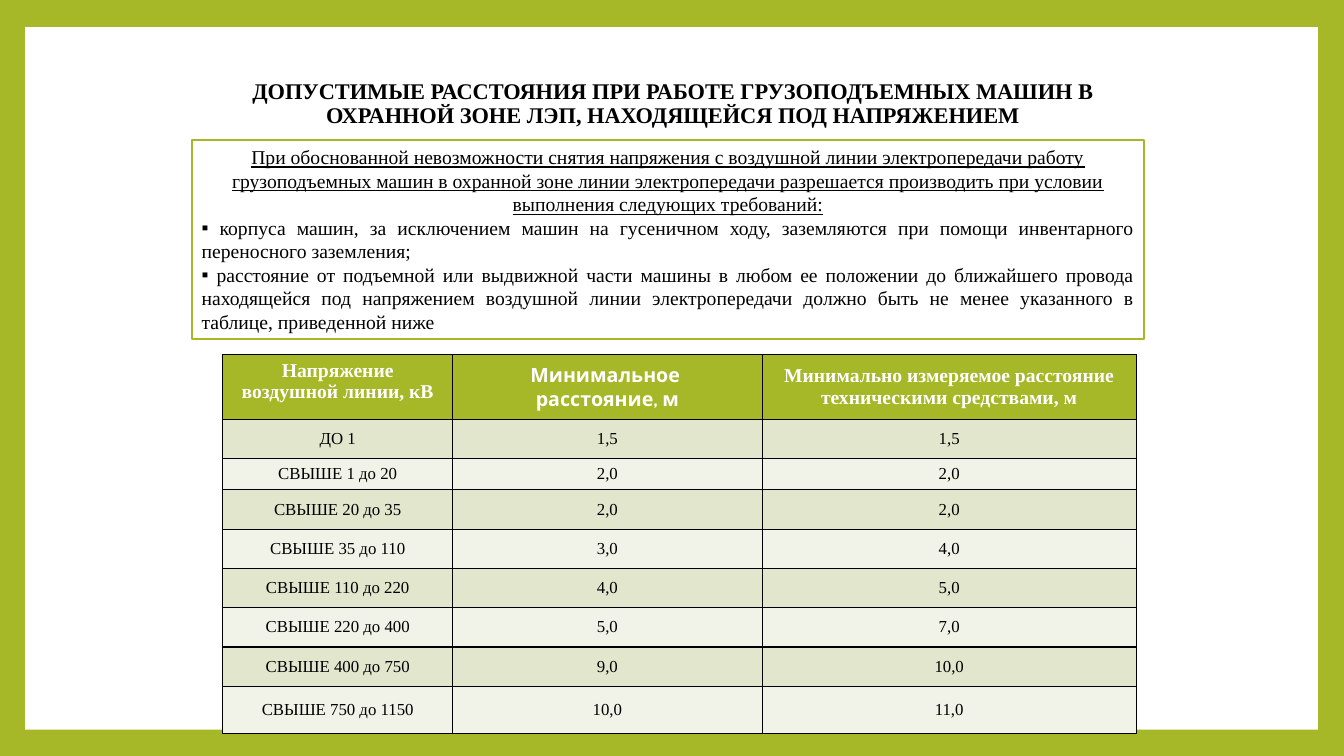
from lxml import etree
from pptx import Presentation
from pptx.dml.color import RGBColor
from pptx.enum import shapes, text
from pptx.oxml import ns
from pptx.util import Inches, Pt

HUES = {"green": "A6B727", "white": "FFFFFF", "black": "000000",
        "dark": "E1E6CD", "light": "F1F3E8"}
SERIF = "Times New Roman"
TITLE = ("ДОПУСТИМЫЕ РАССТОЯНИЯ ПРИ РАБОТЕ ГРУЗОПОДЪЕМНЫХ МАШИН В "
         "ОХРАННОЙ ЗОНЕ ЛЭП, НАХОДЯЩЕЙСЯ ПОД НАПРЯЖЕНИЕМ")
LEAD = ("При обоснованной невозможности снятия напряжения с воздушной линии "
        "электропередачи работу грузоподъемных машин в охранной зоне линии "
        "электропередачи разрешается производить при условии выполнения "
        "следующих требований:")
RULES = [
    " корпуса машин, за исключением машин на гусеничном ходу, заземляются "
    "при помощи инвентарного переносного заземления;",
    " расстояние от подъемной или выдвижной части машины в любом ее положении "
    "до ближайшего провода находящейся под напряжением воздушной линии "
    "электропередачи должно быть не менее указанного в таблице, приведенной ниже",
]
HEADS = ["Напряжение воздушной линии, кВ",
         "Минимальное \nрасстояние, м",
         "Минимально измеряемое расстояние техническими средствами, м"]
ROWS = [
    ("ДО 1", "1,5", "1,5"),
    ("СВЫШЕ 1 до 20", "2,0", "2,0"),
    ("СВЫШЕ 20 до 35", "2,0", "2,0"),
    ("СВЫШЕ 35 до 110", "3,0", "4,0"),
    ("СВЫШЕ 110 до 220", "4,0", "5,0"),
    ("СВЫШЕ 220 до 400", "5,0", "7,0"),
    ("СВЫШЕ 400 до 750", "9,0", "10,0"),
    ("СВЫШЕ 750 до 1150", "10,0", "11,0"),
]
WIDTHS = [2.28, 3.07, 3.71]
HEIGHTS = [0.64, 0.39, 0.31] + [0.39] * 5 + [0.47]


def hue(name):
    return RGBColor.from_string(HUES[name])


def paint(fill, name):
    fill.solid()
    fill.fore_color.rgb = hue(name)


def place(shape, box):
    for key, size in zip(("left", "top", "width", "height"), box):
        setattr(shape, key, Inches(size))


def style(para, size, color="black", align=text.PP_ALIGN.CENTER, **form):
    para.alignment = align
    para.space_before = Pt(0)
    for key, value in {"name": SERIF, "size": Pt(size), **form}.items():
        setattr(para.font, key, value)
    para.font.color.rgb = hue(color)


def mark(para, char=None):
    """Set the paragraph flush left, with an inline bullet or none."""
    props = para._p.get_or_add_pPr()
    props.set("marL", "0")
    props.set("indent", "0")
    tag = etree.SubElement(props, ns.qn("a:buChar" if char else "a:buNone"))
    if char:
        tag.set("char", char)


def border(cell):
    props = cell._tc.get_or_add_tcPr()
    for i, side in enumerate(("lnL", "lnR", "lnT", "lnB")):
        line = etree.Element(ns.qn("a:" + side), w=str(Pt(1)))
        fill = etree.SubElement(line, ns.qn("a:solidFill"))
        etree.SubElement(fill, ns.qn("a:srgbClr"), val=HUES["black"])
        props.insert(i, line)


def frame(slide, box):
    paint(slide.background.fill, "green")
    panel = slide.shapes.add_shape(shapes.MSO_SHAPE.RECTANGLE,
                                   *map(Inches, box))
    panel.shadow.inherit = False
    paint(panel.fill, "white")
    panel.line.fill.background()
    tree = slide.shapes._spTree
    tree.remove(panel._element)
    tree.insert(2, panel._element)


def head(slide, box):
    title = slide.shapes.title
    place(title, box)
    area = title.text_frame
    area.text = TITLE
    area.auto_size = text.MSO_AUTO_SIZE.NONE
    area.vertical_anchor = text.MSO_ANCHOR.MIDDLE
    para = area.paragraphs[0]
    para.line_spacing = 0.9
    style(para, 16, bold=True)


def terms(slide, box):
    body = slide.placeholders[1]
    place(body, box)
    paint(body.fill, "white")
    body.line.color.rgb = hue("green")
    body.line.width = Pt(1.5)
    area = body.text_frame
    area.text = "\n".join([LEAD] + RULES)
    area.auto_size = text.MSO_AUTO_SIZE.NONE
    area.vertical_anchor = text.MSO_ANCHOR.TOP
    lead, *rules = area.paragraphs
    mark(lead)
    style(lead, 14, underline=True)
    for para in rules:
        mark(para, "▪")
        style(para, 14, align=text.PP_ALIGN.JUSTIFY)


def grid(slide, box):
    table = slide.shapes.add_table(len(HEIGHTS), len(WIDTHS),
                                   *map(Inches, box)).table
    for col, width in zip(table.columns, WIDTHS):
        col.width = Inches(width)
    for row, height in zip(table.rows, HEIGHTS):
        row.height = Inches(height)
    for r, words in enumerate([HEADS] + ROWS):
        for c, word in enumerate(words):
            cell = table.cell(r, c)
            cell.text = word
            cell.vertical_anchor = text.MSO_ANCHOR.MIDDLE
            paint(cell.fill, ("dark" if r % 2 else "light") if r else "green")
            border(cell)
            for para in cell.text_frame.paragraphs:
                if r:
                    style(para, 12, bold=False)
                else:
                    style(para, 14, "white", bold=True,
                          name="Cabin" if c == 1 else SERIF)
    table.cell(0, 0).vertical_anchor = text.MSO_ANCHOR.TOP


def main():
    deck = Presentation()
    deck.slide_width, deck.slide_height = Inches(13.33), Inches(7.5)
    slide = deck.slides.add_slide(deck.slide_layouts[1])
    frame(slide, (0.25, 0.27, 12.82, 6.97))
    head(slide, (2.18, 0.76, 8.99, 0.55))
    terms(slide, (1.9, 1.39, 9.45, 1.97))
    grid(slide, (2.21, 3.52, sum(WIDTHS), sum(HEIGHTS)))
    deck.save("out.pptx")


if __name__ == "__main__":
    main()
